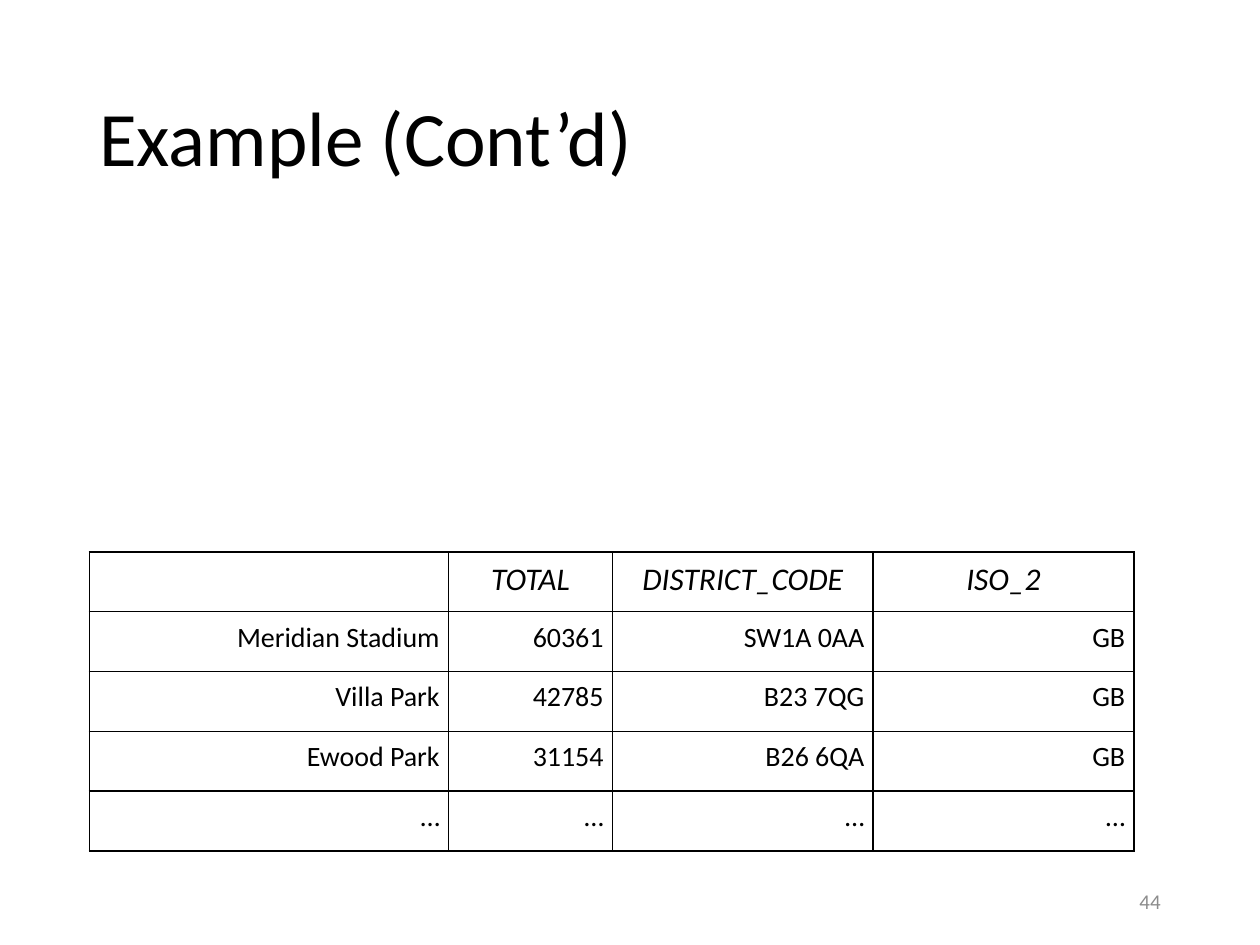
from dataclasses import dataclass

from lxml.etree import SubElement
from pptx import Presentation
from pptx.dml.color import RGBColor
from pptx.enum.text import MSO_ANCHOR as Anchor, PP_ALIGN as Align
from pptx.oxml.ns import qn
from pptx.util import Inches, Pt

BLACK = RGBColor(0x00, 0x00, 0x00)
GREY = RGBColor(0x8C, 0x8C, 0x8C)
WHITE = RGBColor(0xFF, 0xFF, 0xFF)
FONT = "Calibri"
WIDTH, HEIGHT = Inches(10), Inches(7.5)
COLUMNS = (2.85, 1.3, 2.07, 2.07)
ROW_HEIGHT = 0.475
CELL_MARGIN = Inches(0.07)
STADIUMS = (
    ("", "TOTAL", "DISTRICT_CODE", "ISO_2"),
    ("Meridian Stadium", "60361", "SW1A 0AA", "GB"),
    ("Villa Park", "42785", "B23 7QG", "GB"),
    ("Ewood Park", "31154", "B26 6QA", "GB"),
    ("…",) * 4,
)


@dataclass(frozen=True)
class Style:
    size: int
    align: Align = Align.LEFT
    color: RGBColor = BLACK
    italic: bool = False
    spacing: float = 1.0


@dataclass(frozen=True)
class Label:
    text: str
    left: float
    top: float
    width: float
    height: float
    style: Style


HEADER = Style(18, Align.CENTER, italic=True)
BODY = Style(16, Align.RIGHT)
LABELS = (
    Label("Example (Cont’d)", 0.069, 0.053, 0.862, 0.193, Style(44, spacing=0.9)),
    Label("44", 0.706, 0.927, 0.225, 0.053, Style(12, Align.RIGHT, GREY)),
)


def write(tf, text: str, style: Style) -> None:
    tf.text = text
    p = tf.paragraphs[0]
    p.alignment = style.align
    p.line_spacing = style.spacing
    p.font.size = Pt(style.size)
    for r in p.runs:
        r.font.name = FONT
        r.font.size = Pt(style.size)
        r.font.italic = style.italic
        r.font.color.rgb = style.color


def add_label(s, label: Label) -> None:
    sp = s.shapes.add_textbox(
        int(label.left * WIDTH), int(label.top * HEIGHT),
        int(label.width * WIDTH), int(label.height * HEIGHT),
    )
    tf = sp.text_frame
    tf.word_wrap = True
    tf.vertical_anchor = Anchor.MIDDLE
    write(tf, label.text, label.style)


def add_borders(cell) -> None:
    props = cell._tc.get_or_add_tcPr()
    for side in ("a:lnL", "a:lnR", "a:lnT", "a:lnB"):
        line = SubElement(props, qn(side), w=str(Pt(1)))
        fill = SubElement(line, qn("a:solidFill"))
        SubElement(fill, qn("a:srgbClr"), val=str(BLACK))


def add_stadium_table(s) -> None:
    table = s.shapes.add_table(
        len(STADIUMS), len(COLUMNS), int(0.071 * WIDTH), int(0.584 * HEIGHT),
        Inches(sum(COLUMNS)), Inches(ROW_HEIGHT * len(STADIUMS)),
    ).table
    table.first_row = table.horz_banding = False
    for column, width in zip(table.columns, COLUMNS):
        column.width = Inches(width)
    for i, values in enumerate(STADIUMS):
        table.rows[i].height = Inches(ROW_HEIGHT)
        for j, value in enumerate(values):
            cell = table.cell(i, j)
            cell.margin_left = cell.margin_right = CELL_MARGIN
            cell.margin_top = cell.margin_bottom = CELL_MARGIN
            add_borders(cell)
            cell.fill.solid()
            cell.fill.fore_color.rgb = WHITE
            write(cell.text_frame, value, BODY if i else HEADER)


def main() -> None:
    prs = Presentation()
    prs.slide_width, prs.slide_height = WIDTH, HEIGHT
    s = prs.slides.add_slide(prs.slide_layouts[6])
    add_stadium_table(s)
    for label in LABELS:
        add_label(s, label)
    prs.save("out.pptx")


if __name__ == "__main__":
    main()
